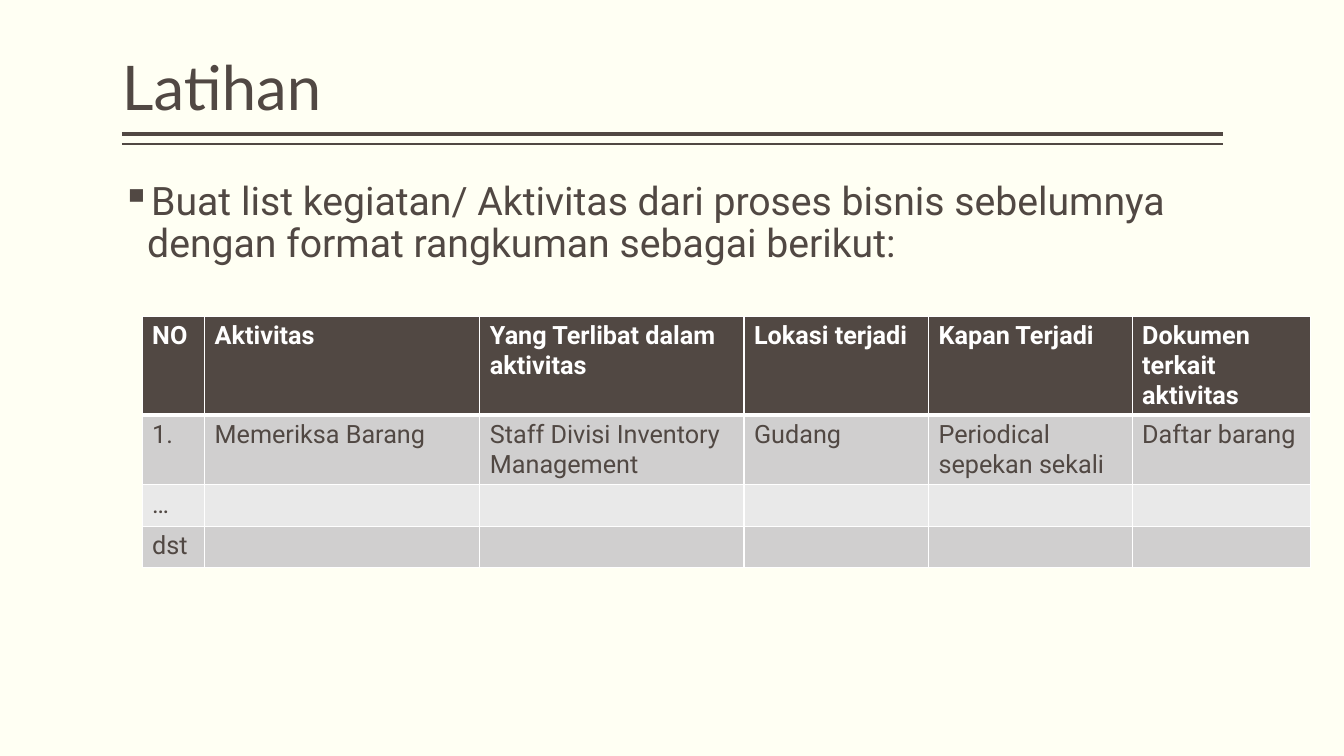
"""Build the "Latihan" exercise slide with its activity summary table."""
from lxml import etree
from pptx import Presentation
from pptx.dml.color import RGBColor
from pptx.enum import shapes, text
from pptx.oxml import ns
from pptx.util import Inches, Pt

TITLE = "Latihan"
TASK = ("Buat list kegiatan/ Aktivitas dari proses bisnis sebelumnya "
        "dengan format rangkuman sebagai berikut:")
ACTIVITIES = [
    ["NO", "Aktivitas", "Yang Terlibat dalam aktivitas", "Lokasi terjadi",
     "Kapan Terjadi", "Dokumen terkait aktivitas"],
    ["1.", "Memeriksa Barang", "Staff Divisi Inventory Management", "Gudang",
     "Periodical sepekan sekali", "Daftar barang"],
    ["…"] + [""] * 5,
    ["dst"] + [""] * 5,
]
COLUMN_WIDTHS = [0.62, 2.73, 2.62, 1.83, 2.02, 1.77]
ROW_HEIGHTS = [0.97, 0.69, 0.41, 0.41]
RULES = [(1.33, 3), (1.43, 1)]
LEFT, WIDTH = 1.21, 10.92
COLORS = {"paper": "FFFFF3", "ink": "514843", "white": "FFFFFF",
          "odd": "D0CFCF", "even": "E9E9E9"}


def color(name):
    return RGBColor.from_string(COLORS[name])


def style(paragraph, font, size, tint, bold=False):
    paragraph.font.name = font
    paragraph.font.size = Pt(size)
    paragraph.font.bold = bold
    paragraph.font.color.rgb = color(tint)


def set_frame(frame, anchor):
    frame.word_wrap = True
    frame.auto_size = text.MSO_AUTO_SIZE.NONE
    frame.vertical_anchor = anchor
    frame.margin_left = frame.margin_right = 0
    frame.margin_top = frame.margin_bottom = Inches(0.05)
    frame.paragraphs[0].line_spacing = 0.9
    frame.paragraphs[0].alignment = text.PP_ALIGN.LEFT


def add_rule(slide, y, weight):
    rule = slide.shapes.add_connector(
        shapes.MSO_CONNECTOR.STRAIGHT, Inches(LEFT), Inches(y),
        Inches(LEFT + WIDTH), Inches(y))
    rule.line.color.rgb = color("ink")
    rule.line.width = Pt(weight)
    etree.SubElement(rule.element.spPr, ns.qn("a:effectLst"))


def add_title(slide):
    title = slide.shapes.title
    title.left, title.top = Inches(LEFT), Inches(0.08)
    title.width, title.height = Inches(WIDTH), Inches(1.2)
    title.text_frame.text = TITLE
    set_frame(title.text_frame, text.MSO_ANCHOR.BOTTOM)
    style(title.text_frame.paragraphs[0], "Lato", 44, "ink")


def add_task(slide):
    task = slide.shapes.add_textbox(
        Inches(LEFT), Inches(1.75), Inches(WIDTH), Inches(5)).text_frame
    task.text = TASK
    set_frame(task, text.MSO_ANCHOR.TOP)
    paragraph = task.paragraphs[0]
    properties = paragraph._p.get_or_add_pPr()
    properties.set("marL", str(Inches(0.25)))
    properties.set("indent", str(Inches(-0.25)))
    etree.SubElement(properties, ns.qn("a:buChar"), char="▪")
    style(paragraph, "Roboto", 28, "ink")


def add_borders(cell, is_header):
    properties = cell._tc.get_or_add_tcPr()
    for side in "LRTB":
        weight = 3 if is_header and side == "B" else 1
        border = etree.SubElement(properties, ns.qn(f"a:ln{side}"), w=str(Pt(weight)))
        fill = etree.SubElement(border, ns.qn("a:solidFill"))
        etree.SubElement(fill, ns.qn("a:srgbClr"), val=COLORS["white"])


def add_activities(slide):
    table = slide.shapes.add_table(
        len(ROW_HEIGHTS), len(COLUMN_WIDTHS), Inches(1.41), Inches(3.14),
        Inches(sum(COLUMN_WIDTHS)), Inches(sum(ROW_HEIGHTS))).table
    for column, width in zip(table.columns, COLUMN_WIDTHS):
        column.width = Inches(width)
    for r, (values, height) in enumerate(zip(ACTIVITIES, ROW_HEIGHTS)):
        is_header = r == 0
        band = "ink" if is_header else ("odd" if r % 2 else "even")
        table.rows[r].height = Inches(height)
        for c, value in enumerate(values):
            cell = table.cell(r, c)
            cell.text_frame.text = value
            style(cell.text_frame.paragraphs[0], "Roboto", 18,
                  "white" if is_header else "ink", is_header)
            add_borders(cell, is_header or False)
            cell.fill.solid()
            cell.fill.fore_color.rgb = color(band)
            if r == 1:
                top = cell._tc.tcPr.find(ns.qn("a:lnT"))
                top.set("w", str(Pt(3)))


def main():
    deck = Presentation()
    deck.slide_width, deck.slide_height = Inches(13.33), Inches(7.5)
    slide = deck.slides.add_slide(deck.slide_layouts.get_by_name("Title Only"))
    slide.background.fill.solid()
    slide.background.fill.fore_color.rgb = color("paper")
    for y, weight in RULES:
        add_rule(slide, y, weight)
    add_title(slide)
    add_task(slide)
    add_activities(slide)
    deck.save("out.pptx")


if __name__ == "__main__":
    main()
